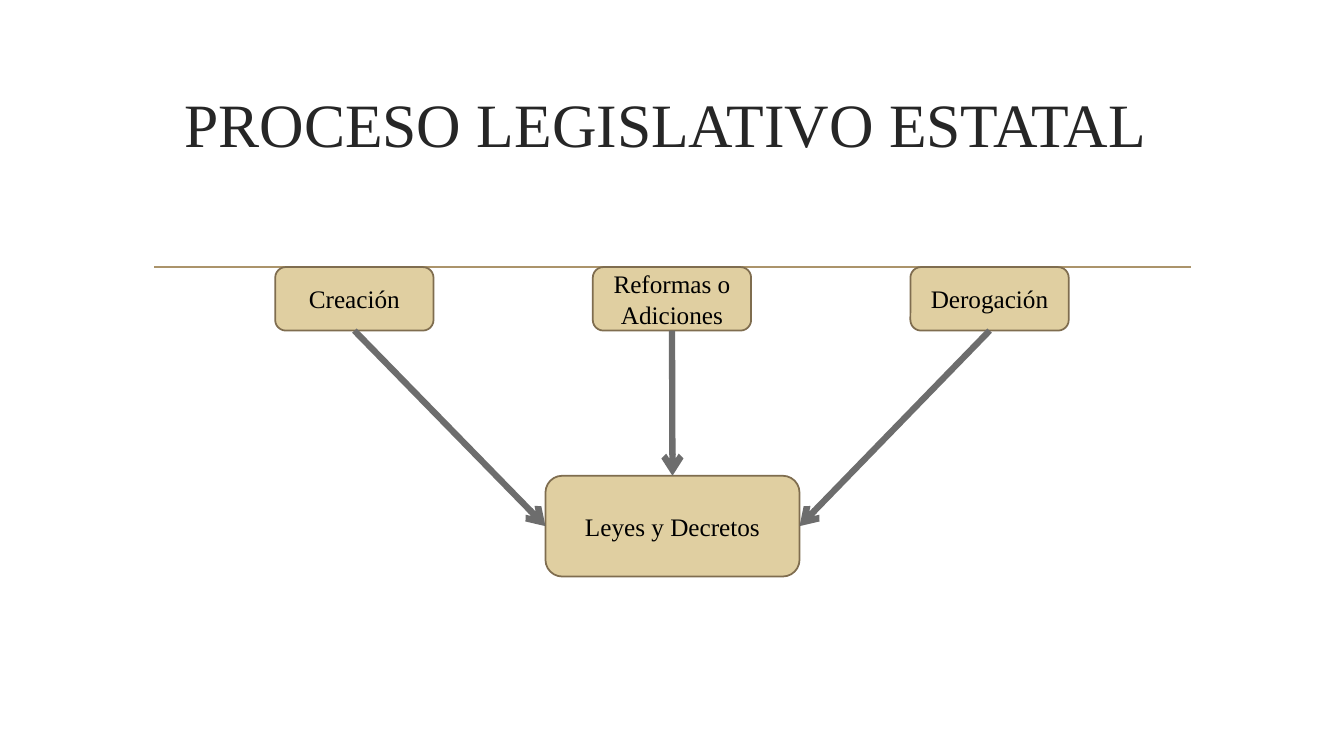
"""Builds the slide on the state legislative process."""
from lxml import etree
from pptx import Presentation
from pptx.dml.color import RGBColor
from pptx.enum.shapes import MSO_CONNECTOR, MSO_SHAPE
from pptx.enum.text import MSO_ANCHOR, PP_ALIGN
from pptx.oxml.ns import qn
from pptx.util import Pt

PX = 9144
STRAIGHT = MSO_CONNECTOR.STRAIGHT
ROUNDED = MSO_SHAPE.ROUNDED_RECTANGLE
MIDDLE = MSO_ANCHOR.MIDDLE
CENTER = PP_ALIGN.CENTER
TOP, LEFT, BOTTOM, RIGHT = range(4)
FONT = "Times New Roman"
BLACK = RGBColor(0x00, 0x00, 0x00)
CHARCOAL = RGBColor(0x26, 0x26, 0x26)
SAND = RGBColor(0xE0, 0xCF, 0xA1)
BROWN = RGBColor(0x7F, 0x6D, 0x4F)
TAN = RGBColor(0xAB, 0x94, 0x6B)
GRAY = RGBColor(0x6D, 0x6D, 0x6D)

prs = Presentation()
prs.slide_width, prs.slide_height = 1333 * PX, 750 * PX
slide = prs.slides.add_slide(prs.slide_layouts[5])


def write(shape, text, size, color):
    frame = shape.text_frame
    frame.word_wrap = True
    frame.vertical_anchor = MIDDLE
    paragraph = frame.paragraphs[0]
    paragraph.text = text
    paragraph.alignment = CENTER
    paragraph.font.name = FONT
    paragraph.font.size = Pt(size)
    paragraph.font.color.rgb = color


def add_line(start, end, color, width):
    line = slide.shapes.add_connector(STRAIGHT, *(n * PX for n in start + end))
    line.line.color.rgb = color
    line.line.width = Pt(width)
    etree.SubElement(line._element.spPr, qn("a:effectLst"))
    return line


title = slide.shapes.title
title.left, title.top, title.width, title.height = (n * PX for n in (142, 50, 1050, 143))
write(title, "PROCESO LEGISLATIVO ESTATAL ", 44, CHARCOAL)

add_line((153, 265), (1181, 265), TAN, 1.25)

steps = [
    ("Creación", 273, 265, 157, 63),
    ("Reformas o Adiciones", 588, 265, 157, 63),
    ("Derogación", 903, 265, 157, 63),
    ("Leyes y Decretos", 541, 472, 252, 100),
]
boxes = []
for label, *bounds in steps:
    box = slide.shapes.add_shape(ROUNDED, *(n * PX for n in bounds))
    box.shadow.inherit = False
    box.fill.solid()
    box.fill.fore_color.rgb = SAND
    box.line.color.rgb = BROWN
    box.line.width = Pt(1.25)
    write(box, label, 18, BLACK)
    boxes.append(box)

*sources, laws = boxes
for source, side in zip(sources, (LEFT, TOP, RIGHT)):
    arrow = add_line((0, 0), (0, 0), GRAY, 4.5)
    arrow.begin_connect(source, BOTTOM)
    arrow.end_connect(laws, side)
    etree.SubElement(arrow.line._get_or_add_ln(), qn("a:tailEnd"), type="arrow")

prs.save("out.pptx")
